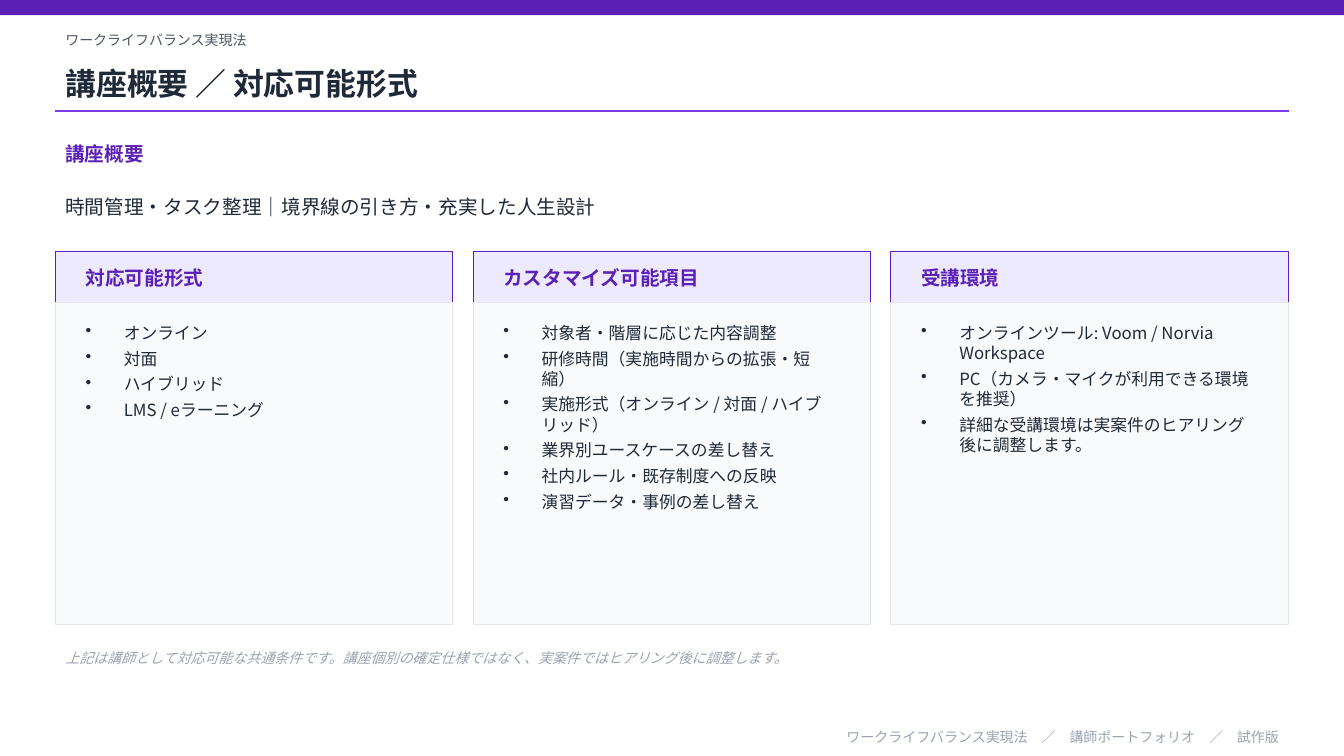
from lxml import etree
from pptx import Presentation
from pptx import util as u
from pptx.dml.color import RGBColor
from pptx.enum import shapes, text
from pptx.oxml.ns import qn

FONT = "Noto Sans CJK JP"
DEEP, VIVID, PALE = "5B21B6", "7C3AED", "EDE9FE"
INK, SLATE, MUTE = "1F2937", "4B5563", "9CA3AF"
PANEL, EDGE = "F9FAFB", "E5E7EB"

COURSE = "ワークライフバランス実現法"
TITLE = "講座概要 ／ 対応可能形式"
LABEL = "講座概要"
THEME = "時間管理・タスク整理｜境界線の引き方・充実した人生設計"
CARDS = [
    ("対応可能形式", ["オンライン", "対面", "ハイブリッド", "LMS / eラーニング"]),
    ("カスタマイズ可能項目", [
        "対象者・階層に応じた内容調整",
        "研修時間（実施時間からの拡張・短縮）",
        "実施形式（オンライン / 対面 / ハイブリッド）",
        "業界別ユースケースの差し替え",
        "社内ルール・既存制度への反映",
        "演習データ・事例の差し替え",
    ]),
    ("受講環境", [
        "オンラインツール: Voom / Norvia Workspace",
        "PC（カメラ・マイクが利用できる環境を推奨）",
        "詳細な受講環境は実案件のヒアリング後に調整します。",
    ]),
]
NOTE = "上記は講師として対応可能な共通条件です。講座個別の確定仕様ではなく、実案件ではヒアリング後に調整します。"
FOOT = COURSE + "　／　講師ポートフォリオ　／　試作版"

WIDE, HIGH = 13.33, 7.5
LEFT = 0.55
SPAN = WIDE - 2 * LEFT
GAP, PAD = 0.2, 0.2
CARD = (SPAN - GAP * (len(CARDS) - 1)) / len(CARDS)
TOP, HEAD, BODY = 2.5, 0.5, 3.2

deck = Presentation()
deck.slide_width, deck.slide_height = u.Inches(WIDE), u.Inches(HIGH)
slide = deck.slides.add_slide(deck.slide_layouts[5])


def color(code):
    return RGBColor.from_string(code)


def inches(*sizes):
    return [u.Inches(size) for size in sizes]


def rect(x, y, w, h, fill, line=None):
    box = slide.shapes.add_shape(shapes.MSO_SHAPE.RECTANGLE, *inches(x, y, w, h))
    box.shadow.inherit = False
    box.fill.solid()
    box.fill.fore_color.rgb = color(fill)
    if line:
        box.line.color.rgb = color(line)
        box.line.width = u.Pt(0.75)
    else:
        box.line.fill.background()


def bullet(para):
    props = para._p.get_or_add_pPr()
    props.set("marL", str(u.Inches(0.38)))
    props.set("indent", str(-u.Inches(0.38)))
    para.space_after = u.Pt(4)
    etree.SubElement(props, qn("a:buChar"), char="•")


def write(box, lines, size, ink, bold=False, italic=False,
          align=text.PP_ALIGN.LEFT, listed=False):
    frame = box.text_frame
    frame.word_wrap = True
    frame.auto_size = text.MSO_AUTO_SIZE.NONE
    frame.vertical_anchor = text.MSO_ANCHOR.TOP if listed else text.MSO_ANCHOR.MIDDLE
    for i, line in enumerate(lines):
        para = frame.add_paragraph() if i else frame.paragraphs[0]
        para.alignment = align
        if listed:
            bullet(para)
        run = para.add_run()
        run.text = line
        font = run.font
        font.name, font.size = FONT, u.Pt(size)
        font.bold, font.italic = bold, italic
        font.color.rgb = color(ink)


def label(x, y, w, h, lines, size, ink, **style):
    write(slide.shapes.add_textbox(*inches(x, y, w, h)), lines, size, ink, **style)


rect(0, 0, WIDE, 0.15, DEEP)
label(LEFT, 0.25, SPAN, 0.3, [COURSE], 10, SLATE)

title = slide.shapes.title
title.left, title.top, title.width, title.height = inches(LEFT, 0.55, SPAN, 0.55)
write(title, [TITLE], 22, INK, bold=True)

rule = slide.shapes.add_connector(
    shapes.MSO_CONNECTOR.STRAIGHT, *inches(LEFT, 1.1, LEFT + SPAN, 1.1))
rule.line.color.rgb = color(VIVID)
rule.line.width = u.Pt(1)
etree.SubElement(rule._element.spPr, qn("a:effectLst"))

label(LEFT, 1.35, SPAN, 0.35, [LABEL], 14, DEEP, bold=True)
label(LEFT, 1.75, SPAN, 0.6, [THEME], 14, INK)

for i, (name, items) in enumerate(CARDS):
    x = LEFT + i * (CARD + GAP)
    inner = CARD - 2 * PAD
    rect(x, TOP, CARD, HEAD, PALE, DEEP)
    label(x + PAD, TOP, inner, HEAD, [name], 14, DEEP, bold=True)
    rect(x, TOP + HEAD, CARD, BODY, PANEL, EDGE)
    label(x + PAD, TOP + HEAD + 0.15, inner, BODY - 0.35, items, 12, INK, listed=True)

label(LEFT, 6.35, SPAN, 0.35, [NOTE], 10, MUTE, italic=True)
label(LEFT, 7.2, SPAN, 0.22, [FOOT], 10, MUTE, align=text.PP_ALIGN.RIGHT)

deck.save("out.pptx")
